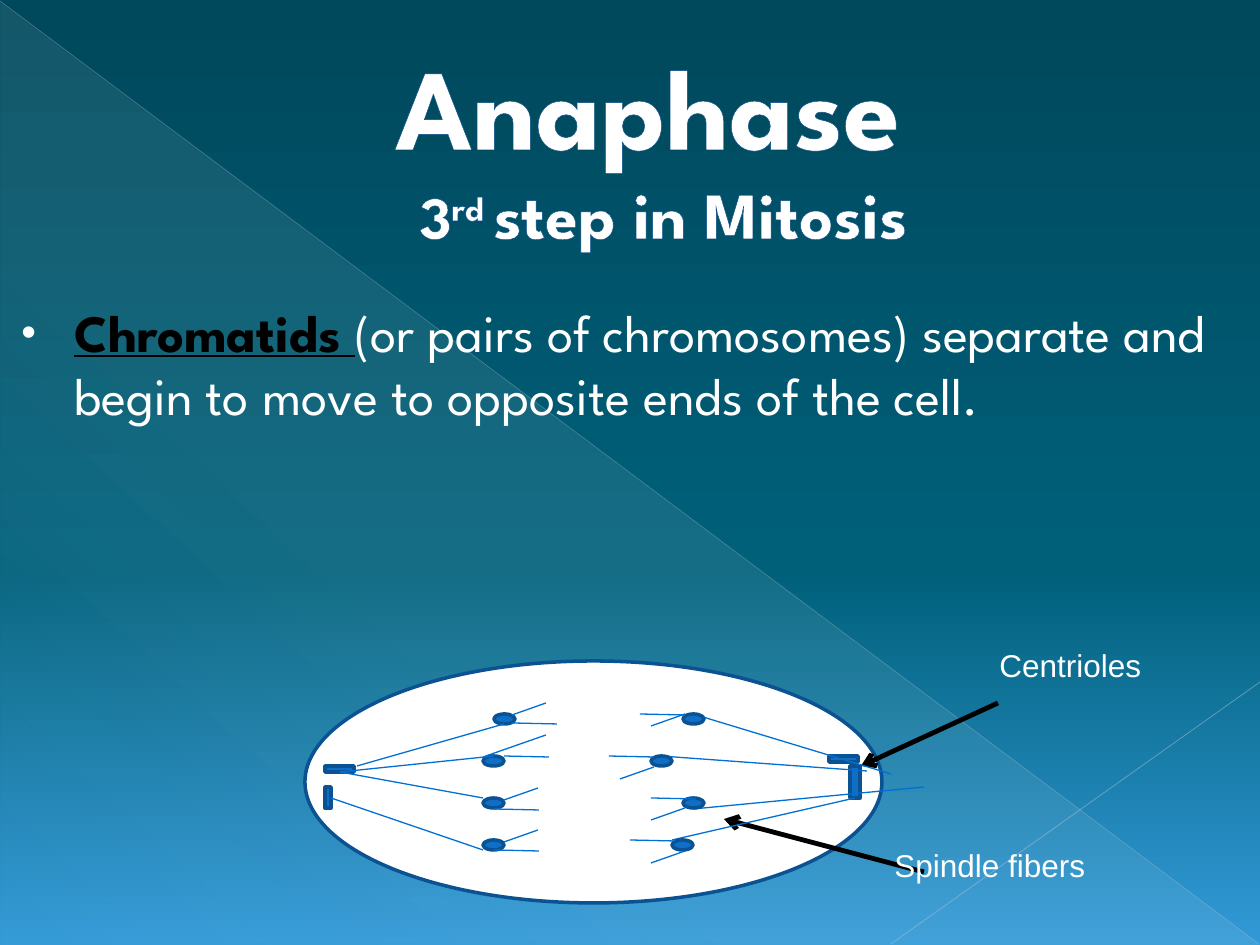
from lxml.etree import SubElement
from pptx import Presentation
from pptx.dml.color import RGBColor
from pptx.enum.shapes import MSO_CONNECTOR, MSO_SHAPE
from pptx.enum.text import MSO_ANCHOR, MSO_AUTO_SIZE, PP_ALIGN
from pptx.oxml.ns import qn
from pptx.util import Pt

SCALE = 914400 / 126  # EMU per px
WHITE, BLACK = RGBColor(255, 255, 255), RGBColor(0, 0, 0)
BLUE, DARK_BLUE = RGBColor(0x0F, 0x6F, 0xC6), RGBColor(0x0B, 0x52, 0x92)
FIBER_BLUE, OUTLINE = RGBColor(0x00, 0x70, 0xD5), RGBColor(0x0A, 0x4D, 0x89)
ICE = RGBColor(0xDB, 0xF5, 0xF9)
HEADING_FONT, LABEL_FONT = "League Spartan", "Arial"

# Gradient stops: position %, colour, opacity %
BACKGROUND = [(0, RGBColor(0x00, 0x48, 0x5C), 100), (60, RGBColor(0x00, 0x60, 0x7A), 100),
              (100, RGBColor(0x32, 0x99, 0xD7), 100)]
TRIANGLE = [(0, ICE, 10), (70, ICE, 8), (100, ICE, 1)]
# Ends, colour, width in pt, opacity %
DECOR_LINES = [((0, 1, 1259, 944), RGBColor(0xAC, 0xC0, 0xCE), 0.39, 35),
               ((1260, 682, 891, 944), RGBColor(0xB5, 0xC7, 0xD3), 0.47, 45)]

# Text, size, baseline %; a row per line
TITLE = [[("Anaphase ", 65.7, 0)],
         [("3", 34.2, 0), ("rd ", 34.2, 30), ("step in Mitosis", 37.8, 0)]]
KEY_TERM = "Chromatids "
DEFINITION = "(or pairs of chromosomes) separate and begin to move to opposite ends of the cell."

# Label, box, wrap, arrow ends
LABELS = [("Centrioles", (987, 640, 273, 50), True, (998, 703, 861, 766)),
          ("Spindle fibers", (882, 840, 218, 50), False, (924, 872, 724, 819))]
CELL = (305, 661, 577, 242)
CENTRIOLES = [(325, 787, 6, 21), (829, 756, 29, 6), (850, 766, 10, 32), (325, 766, 29, 6)]
CHROMATID_TOP, CHROMATID_STEP, CHROMATID_SIZE = 714, 42, (21, 10)
LEFT_CHROMATIDS = [494, 483, 483, 483]
RIGHT_CHROMATIDS = [683, 651, 683, 672]
FIBERS = [(357, 766, 504, 724), (340, 772, 494, 756), (340, 772, 483, 798),
          (331, 798, 483, 850), (693, 714, 891, 774), (661, 756, 867, 771),
          (693, 809, 924, 787), (672, 840, 855, 798)]
# Chromatid arms: (dx, dy) and where each starts
ARMS = [((34, -12), [(512, 715), (651, 863), (651, 820), (620, 779), (651, 726),
                     (504, 800), (504, 842)]),
        ((63, -22), [(483, 757)]),
        ((45, 1), [(512, 723), (504, 756), (494, 809), (494, 850), (640, 714),
                   (609, 756), (651, 798), (630, 840)])]


def px(*values):
    return [round(value * SCALE) for value in values]


def set_gradient(fill, owner, stops, angle):
    fill.gradient()
    gradient = next(owner.iter(qn("a:gradFill")))
    for child in list(gradient):
        gradient.remove(child)
    stop_list = SubElement(gradient, qn("a:gsLst"))
    for position, color, opacity in stops:
        stop = SubElement(stop_list, qn("a:gs"), pos=str(position * 1000))
        solid = SubElement(stop, qn("a:srgbClr"), val=str(color))
        SubElement(solid, qn("a:alpha"), val=str(opacity * 1000))
    SubElement(gradient, qn("a:lin"), ang=str(angle * 60000), scaled="0")


def add_line(ends, color, width, opacity=100, arrow=False):
    connector = slide.shapes.add_connector(MSO_CONNECTOR.STRAIGHT, *px(*ends))
    connector.line.color.rgb = color
    connector.line.width = Pt(width)
    properties = connector.element.find(qn("p:spPr"))
    line = properties.find(qn("a:ln"))
    if opacity < 100:
        SubElement(next(line.iter(qn("a:srgbClr"))), qn("a:alpha"), val=str(opacity * 1000))
    if arrow:
        SubElement(line, qn("a:tailEnd"), type="arrow")
    SubElement(properties, qn("a:effectLst"))


def add_solid(kind, box, color):
    shape = slide.shapes.add_shape(kind, *px(*box))
    shape.shadow.inherit = False
    shape.fill.solid()
    shape.fill.fore_color.rgb = color
    shape.line.color.rgb = DARK_BLUE
    shape.line.width = Pt(2)


def add_chromatids(lefts):
    for row, left in enumerate(lefts):
        top = CHROMATID_TOP + row * CHROMATID_STEP
        add_solid(MSO_SHAPE.FLOWCHART_CONNECTOR, (left, top, *CHROMATID_SIZE), BLUE)


def add_run(paragraph, text, font, size, color, bold=False):
    run = paragraph.add_run()
    run.text = text
    run.font.name, run.font.size = font, Pt(size)
    run.font.color.rgb, run.font.bold = color, bold
    return run


presentation = Presentation()
presentation.slide_width, presentation.slide_height = px(1260, 945)
slide = presentation.slides.add_slide(presentation.slide_layouts[5])

# Backdrop
set_gradient(slide.background.fill, slide.element, BACKGROUND, 90)
triangle = slide.shapes.add_shape(MSO_SHAPE.RIGHT_TRIANGLE, *px(1, 2, 1259, 943))
triangle.shadow.inherit = False
triangle.line.fill.background()
set_gradient(triangle.fill, triangle.element, TRIANGLE, 133)
for decor_line in DECOR_LINES:
    add_line(*decor_line)

# Title, brought in front of the backdrop
title = slide.shapes.title
title.element.getparent().append(title.element)
title.left, title.top, title.width, title.height = px(0, 21, 1260, 245)
title.text_frame.auto_size = MSO_AUTO_SIZE.NONE
title.text_frame.vertical_anchor = MSO_ANCHOR.MIDDLE
paragraph = title.text_frame.paragraphs[0]
paragraph.alignment = PP_ALIGN.CENTER
paragraph_properties = paragraph._p.get_or_add_pPr()
paragraph_properties.set("marL", str(px(67)[0]))
paragraph_properties.set("indent", "0")
for index, title_line in enumerate(TITLE):
    if index:
        paragraph.add_line_break()
    for text, size, baseline in title_line:
        run = add_run(paragraph, text, HEADING_FONT, size, WHITE, True)
        run_properties = run._r.get_or_add_rPr()
        if baseline:
            run_properties.set("baseline", str(baseline * 1000))
        outline = SubElement(run_properties, qn("a:ln"), w=str(Pt(0.5)))
        outline_fill = SubElement(outline, qn("a:solidFill"))
        SubElement(outline_fill, qn("a:srgbClr"), val=str(OUTLINE))
        run_properties.insert(0, outline)

# Definition with its bullet
body = slide.shapes.add_textbox(*px(0, 294, 1260, 346))
body.text_frame.word_wrap = True
paragraph = body.text_frame.paragraphs[0]
paragraph.space_before = Pt(6)
paragraph_properties = paragraph._p.get_or_add_pPr()
paragraph_properties.set("marL", str(px(62)[0]))
paragraph_properties.set("indent", str(px(-53)[0]))
bullet_color = SubElement(paragraph_properties, qn("a:buClr"))
SubElement(bullet_color, qn("a:srgbClr"), val=str(WHITE))
SubElement(paragraph_properties, qn("a:buSzPct"), val="80000")
SubElement(paragraph_properties, qn("a:buFont"), typeface=LABEL_FONT)
SubElement(paragraph_properties, qn("a:buChar"), char="•")
add_run(paragraph, KEY_TERM, HEADING_FONT, 30, BLACK, True).font.underline = True
add_run(paragraph, DEFINITION, HEADING_FONT, 30, WHITE)

# Cell and its labels
add_solid(MSO_SHAPE.OVAL, CELL, WHITE)
for text, box, wrap, arrow_ends in LABELS:
    add_line(arrow_ends, BLACK, 2.75, arrow=True)
    label = slide.shapes.add_textbox(*px(*box))
    label.text_frame.word_wrap = wrap
    label.text_frame.auto_size = MSO_AUTO_SIZE.SHAPE_TO_FIT_TEXT
    add_run(label.text_frame.paragraphs[0], text, LABEL_FONT, 18, WHITE)

# Centrioles, chromatids and spindle fibers
for box in CENTRIOLES:
    add_solid(MSO_SHAPE.RECTANGLE, box, BLUE)
add_chromatids(LEFT_CHROMATIDS)
for ends in FIBERS:
    add_line(ends, FIBER_BLUE, 0.75)
add_chromatids(RIGHT_CHROMATIDS)
for (dx, dy), starts in ARMS:
    for x, y in starts:
        add_line((x, y, x + dx, y + dy), FIBER_BLUE, 0.75)

presentation.save("out.pptx")
